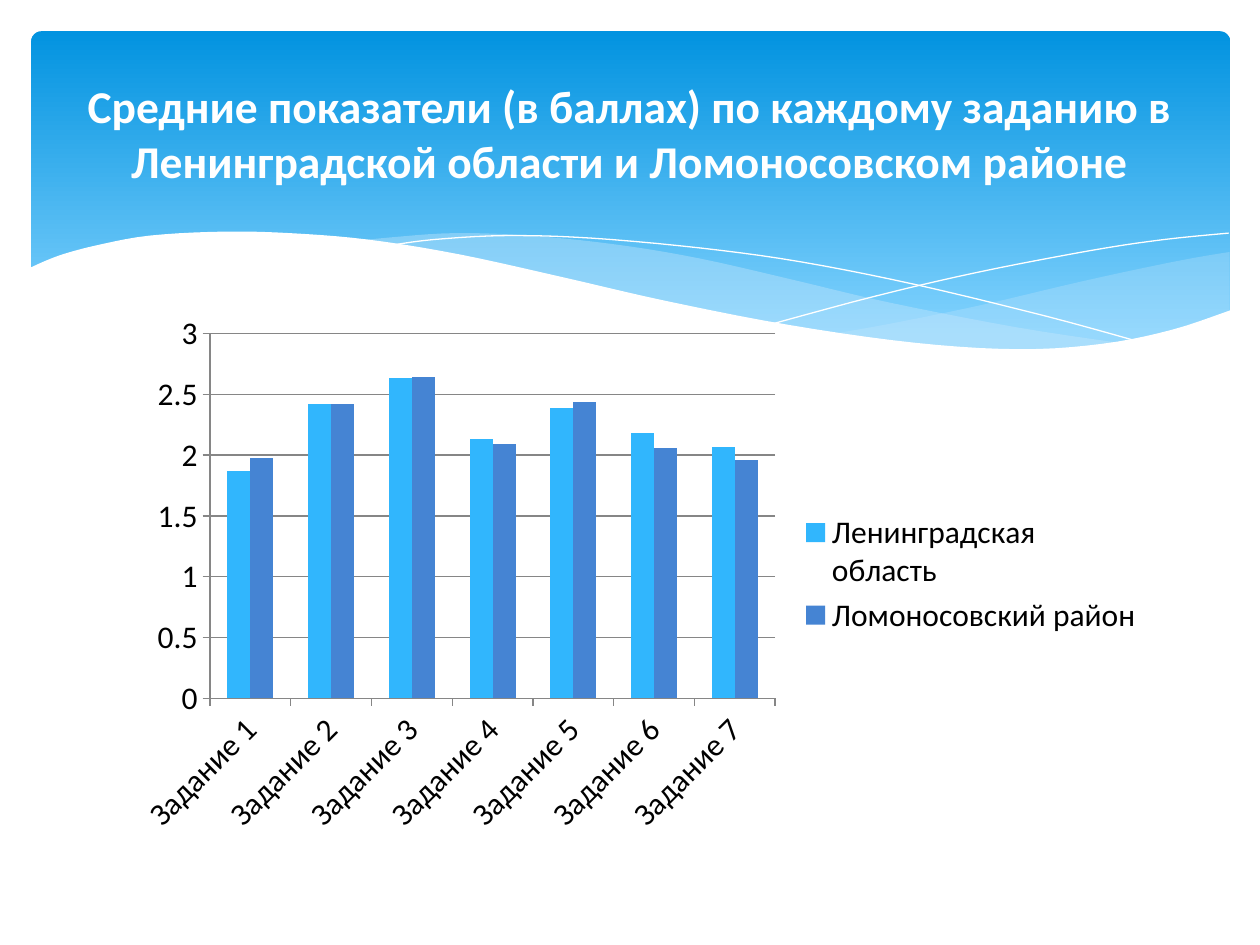
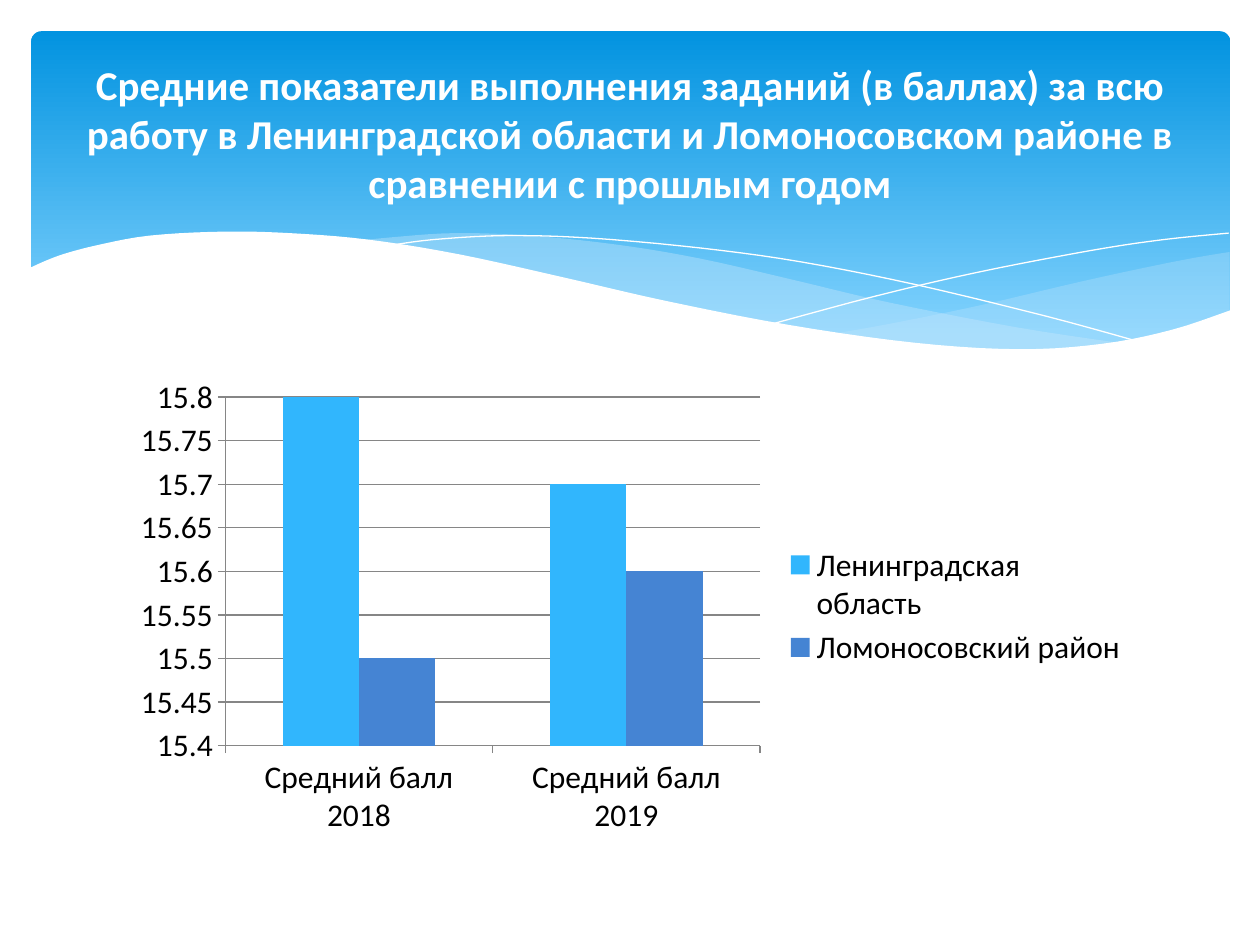
"""Build two slides comparing average task scores of a region and a district."""
import dataclasses

import pptx
import pptx.chart.data
import pptx.dml.color
import pptx.enum.chart
import pptx.enum.shapes
import pptx.enum.text
import pptx.oxml
import pptx.oxml.ns
import pptx.util

Cm = pptx.util.Cm
Pt = pptx.util.Pt

REGION, DISTRICT = "Ленинградская область", "Ломоносовский район"
SLIDES = [
    {
        "title": "Средние показатели (в баллах) по каждому заданию в "
                 "Ленинградской области и Ломоносовском районе",
        "title_size": 26,
        "categories": [f"Задание {number}" for number in range(1, 8)],
        "series": {
            REGION: (1.87, 2.42, 2.63, 2.13, 2.39, 2.18, 2.07),
            DISTRICT: (1.98, 2.42, 2.64, 2.09, 2.44, 2.06, 1.96),
        },
        "scale": {"minimum_scale": 0, "maximum_scale": 3, "major_unit": 0.5},
        "chart_box": (2.43, 6.12, 20.88, 10.9),
    },
    {
        "title": "Средние показатели выполнения заданий (в баллах) за всю "
                 "работу в Ленинградской области и Ломоносовском районе "
                 "в сравнении с прошлым годом",
        "title_size": 23.4,
        "categories": [f"Средний балл {year}" for year in (2018, 2019)],
        "series": {REGION: (15.8, 15.7), DISTRICT: (15.5, 15.6)},
        "scale": {"minimum_scale": 15.4, "maximum_scale": 15.8,
                  "major_unit": 0.05},
        "chart_box": (2.43, 7.43, 20.57, 9.58),
    },
]

TITLE_BOX = (1.27, 0.94, 22.86, 3.48)
BAND_BOX = (0.63, 0.63, 24.17, 6.86)

RIGHT_SWELL = [
    [(24.79, 5.08), (23.75, 5.26), (21.87, 5.66), (19.79, 6.15),
     (17.93, 6.53), (16.79, 6.73)],
    [(16.79, 6.73), (17.91, 6.88), (19.23, 7.01), (20.4, 7.06),
     (21.69, 7.01), (22.99, 6.83), (23.93, 6.58), (24.79, 6.27)],
]
LONG_SWELL = [
    [(22.68, 6.93), (20.5, 6.6), (17.93, 6.1), (15.98, 5.64), (14.1, 5.21),
     (12.42, 4.93), (10.67, 4.75), (9.17, 4.7), (7.95, 4.78), (7.26, 4.85)],
    [(7.26, 4.85), (8.69, 5.05), (10.26, 5.36), (12.47, 5.89), (14.38, 6.3),
     (16.1, 6.63), (17.65, 6.86), (19, 7.01), (20.5, 7.06), (21.77, 7.04),
     (22.68, 6.93)],
]
FALLING_LINE = [
    [(7.85, 4.95), (8.74, 4.83), (10.19, 4.75), (11.91, 4.8), (14.12, 5),
     (16.15, 5.28), (18.47, 5.74), (21.11, 6.38), (23.04, 6.91)],
]
RISING_LINE = [
    [(15.57, 6.53), (17.65, 5.97), (19.71, 5.49), (22, 5.05),
     (23.47, 4.83), (24.77, 4.7)],
]
WHITE_WAVE = [
    [(24.82, 6.25), (23.62, 6.65), (22.23, 6.93), (20.55, 7.04),
     (18.44, 6.91), (15.9, 6.55), (13.44, 6.07), (11.35, 5.59),
     (9.27, 5.13), (7.42, 4.83), (5.84, 4.7), (4.5, 4.67), (3.02, 4.75),
     (1.93, 4.95), (1.17, 5.16), (0.58, 5.41)],
    [(0.58, 8.36), (24.82, 8.36)],
]


@dataclasses.dataclass(frozen=True)
class Theme:
    font: str = "Calibri"
    white: str = "FFFFFF"
    text: str = "000000"
    band_top: str = "0293E0"
    band_bottom: str = "83D3FE"
    swell: str = "C6E7FC"
    grid: str = "868686"
    series: tuple = ("31B6FD", "4584D3")
    chart_size: int = 18


THEME = Theme()


def color(value):
    return pptx.dml.color.RGBColor.from_string(value)


def set_attributes(target, values):
    for name, value in values.items():
        setattr(target, name, value)


def format_font(font, size, value, bold):
    set_attributes(font, {"name": THEME.font, "size": Pt(size), "bold": bold})
    font.color.rgb = color(value)


def smooth_curve(knots, steps=5):
    """Return points of a Catmull-Rom curve through the knots."""
    padded = [knots[0], *knots, knots[-1]]
    points = [knots[0]]
    for before, start, end, after in zip(padded, padded[1:], padded[2:], padded[3:]):
        for step in range(1, steps + 1):
            t = step / steps
            points.append(tuple(
                (2 * b + (c - a) * t + (2 * a - 5 * b + 4 * c - d) * t ** 2
                 + (3 * b - a - 3 * c + d) * t ** 3) / 2
                for a, b, c, d in zip(before, start, end, after)))
    return points


def add_curve(slide, edges, fill=None, opacity=100):
    """Draw a filled outline, or an open white hairline when fill is None."""
    points = [(Cm(x), Cm(y)) for edge in edges for x, y in smooth_curve(edge)]
    builder = slide.shapes.build_freeform(*points[0])
    builder.add_line_segments(points[1:], close=fill is not None)
    shape = builder.convert_to_shape()
    shape.shadow.inherit = False
    if fill is None:
        shape.fill.background()
        shape.line.color.rgb = color(THEME.white)
        shape.line.width = Pt(0)
        return shape
    shape.fill.solid()
    shape.fill.fore_color.rgb = color(fill)
    shape.line.fill.background()
    if opacity < 100:
        fill_color = shape.element.spPr.find(".//" + pptx.oxml.ns.qn("a:srgbClr"))
        fill_color.append(pptx.oxml.parse_xml(
            f'<a:alpha {pptx.oxml.ns.nsdecls("a")} val="{opacity * 1000}"/>'))
    return shape


def add_band(slide):
    band = slide.shapes.add_shape(
        pptx.enum.shapes.MSO_SHAPE.ROUNDED_RECTANGLE, *map(Cm, BAND_BOX))
    band.adjustments[0] = 0.03
    band.shadow.inherit = False
    band.line.fill.background()
    band.fill.gradient()
    band.fill.gradient_angle = 270
    stops = ((0, THEME.band_top), (0.9, THEME.band_bottom))
    for stop, (position, value) in zip(band.fill.gradient_stops, stops):
        stop.position = position
        stop.color.rgb = color(value)
    return band


def decorate_layout(layout, slide):
    """Build the wavy header and move it to the layout all slides share."""
    header = [
        add_band(slide),
        add_curve(slide, RIGHT_SWELL, THEME.swell, 29),
        add_curve(slide, LONG_SWELL, THEME.swell, 40),
        add_curve(slide, FALLING_LINE),
        add_curve(slide, RISING_LINE),
        add_curve(slide, WHITE_WAVE, THEME.white),
    ]
    for index, shape in enumerate(header, start=2):
        layout.shapes.element.insert(index, shape.element)


def set_title(slide, text, size):
    title = slide.shapes.title
    set_attributes(title, dict(zip(("left", "top", "width", "height"),
                                   map(Cm, TITLE_BOX))))
    frame = title.text_frame
    frame.text = text
    set_attributes(frame, {
        "word_wrap": True,
        "auto_size": pptx.enum.text.MSO_AUTO_SIZE.NONE,
        "vertical_anchor": pptx.enum.text.MSO_ANCHOR.MIDDLE,
    })
    paragraph = frame.paragraphs[0]
    paragraph.alignment = pptx.enum.text.PP_ALIGN.CENTER
    format_font(paragraph.runs[0].font, size, THEME.white, True)


def add_score_chart(slide, content):
    data = pptx.chart.data.CategoryChartData()
    data.categories = content["categories"]
    for name, values in content["series"].items():
        data.add_series(name, values)
    chart = slide.shapes.add_chart(
        pptx.enum.chart.XL_CHART_TYPE.COLUMN_CLUSTERED,
        *map(Cm, content["chart_box"]), data).chart
    set_attributes(chart, {"has_title": False, "has_legend": True})
    format_font(chart.font, THEME.chart_size, THEME.text, False)
    set_attributes(chart.legend, {
        "position": pptx.enum.chart.XL_LEGEND_POSITION.RIGHT,
        "include_in_layout": False,
    })
    plot = chart.plots[0]
    set_attributes(plot, {"gap_width": 150, "overlap": 0,
                          "vary_by_categories": False})
    for series, value in zip(plot.series, THEME.series):
        series.format.fill.solid()
        series.format.fill.fore_color.rgb = color(value)
    for axis in (chart.category_axis, chart.value_axis):
        axis.major_tick_mark = pptx.enum.chart.XL_TICK_MARK.OUTSIDE
        axis.minor_tick_mark = pptx.enum.chart.XL_TICK_MARK.NONE
    chart.value_axis.has_major_gridlines = True
    set_attributes(chart.value_axis, content["scale"])
    for part in (chart.category_axis, chart.value_axis,
                 chart.value_axis.major_gridlines):
        part.format.line.color.rgb = color(THEME.grid)
        part.format.line.width = Pt(0.75)


def main():
    presentation = pptx.Presentation()
    set_attributes(presentation, {"slide_width": Cm(25.4),
                                  "slide_height": Cm(19.05)})
    layout = presentation.slide_layouts.get_by_name("Title Only")
    slides = [presentation.slides.add_slide(layout) for _ in SLIDES]
    decorate_layout(layout, slides[0])
    for slide, content in zip(slides, SLIDES):
        set_title(slide, content["title"], content["title_size"])
        add_score_chart(slide, content)
    presentation.save("out.pptx")


if __name__ == "__main__":
    main()
